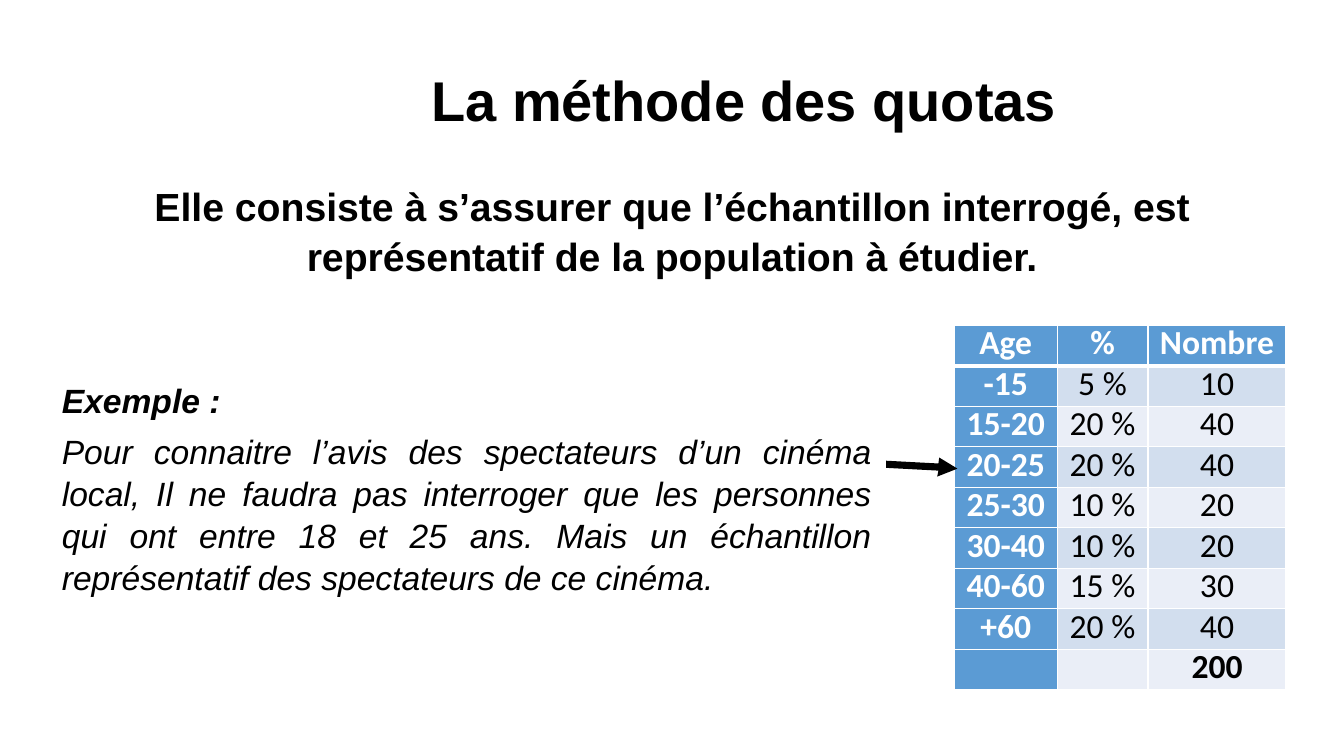
from dataclasses import dataclass

from lxml.etree import SubElement
from pptx import Presentation
from pptx.dml.color import RGBColor
from pptx.enum.text import MSO_ANCHOR, PP_ALIGN
from pptx.oxml.ns import qn
from pptx.util import Cm, Pt


@dataclass(frozen=True)
class Theme:
    text_font: str = "Arial"
    table_font: str = "Calibri"
    black: str = "000000"
    white: str = "FFFFFF"
    header: str = "5B9BD4"
    odd_band: str = "D2DEEE"
    even_band: str = "EAEEF7"
    title_size: int = 40
    definition_size: int = 28
    body_size: int = 24
    thin_border: int = 1
    thick_border: int = 3


class SlideBuilder:
    def __init__(self, slide, theme):
        self.slide = slide
        self.theme = theme

    def add_run(self, paragraph, text, font, size, color, bold=False, italic=False):
        run = paragraph.add_run()
        run.text = text
        run.font.name = font
        run.font.size = Pt(size)
        run.font.color.rgb = RGBColor.from_string(color)
        run.font.bold = bold
        run.font.italic = italic

    def text(self, box, paragraphs, size, align, line_spacing=1.0, space_before=0, italic=False):
        frame = self.slide.shapes.add_textbox(*map(Cm, box)).text_frame
        frame.word_wrap = True
        frame.margin_left = frame.margin_right = frame.margin_top = frame.margin_bottom = 0
        for index, (content, bold) in enumerate(paragraphs):
            paragraph = frame.add_paragraph() if index else frame.paragraphs[0]
            paragraph.alignment = align
            paragraph.line_spacing = line_spacing
            if index:
                paragraph.space_before = Pt(space_before)
            self.add_run(paragraph, content, self.theme.text_font, size,
                         self.theme.black, bold, italic)

    def add_borders(self, cell, row):
        properties = cell._tc.get_or_add_tcPr()
        thick_side = {0: "lnB", 1: "lnT"}.get(row)
        for side in ("lnL", "lnR", "lnT", "lnB"):
            width = self.theme.thick_border if side == thick_side else self.theme.thin_border
            line = SubElement(properties, qn(f"a:{side}"), w=str(Pt(width)))
            fill = SubElement(line, qn("a:solidFill"))
            SubElement(fill, qn("a:srgbClr"), val=self.theme.white)

    def table(self, left, top, column_widths, row_height, rows):
        theme = self.theme
        table = self.slide.shapes.add_table(
            len(rows), len(column_widths), Cm(left), Cm(top),
            Cm(sum(column_widths)), Cm(row_height * len(rows))).table
        table.first_row = table.horz_banding = False
        for column, width in zip(table.columns, column_widths):
            column.width = Cm(width)
        for row, values in enumerate(rows):
            table.rows[row].height = Cm(row_height)
            for column, value in enumerate(values):
                cell = table.cell(row, column)
                heading = row == 0 or column == 0
                total = row == len(rows) - 1
                band = theme.odd_band if row % 2 else theme.even_band
                self.add_borders(cell, row)
                cell.fill.solid()
                cell.fill.fore_color.rgb = RGBColor.from_string(theme.header if heading else band)
                cell.margin_left = cell.margin_right = cell.margin_top = cell.margin_bottom = 0
                cell.vertical_anchor = MSO_ANCHOR.TOP
                paragraph = cell.text_frame.paragraphs[0]
                paragraph.alignment = PP_ALIGN.CENTER
                paragraph.line_spacing = Pt(27.6)
                if value:
                    self.add_run(paragraph, value, theme.table_font, theme.body_size,
                                 theme.white if heading else theme.black, heading or total)

    def outline(self, points, color):
        start, *others = [(Cm(x), Cm(y)) for x, y in points]
        builder = self.slide.shapes.build_freeform(*start)
        builder.add_line_segments(others, close=True)
        shape = builder.convert_to_shape()
        shape.shadow.inherit = False
        shape.fill.solid()
        shape.fill.fore_color.rgb = RGBColor.from_string(color)
        shape.line.fill.background()


QUOTAS = [
    ("Age", "%", "Nombre"),
    ("-15", "5 %", "10"),
    ("15-20", "20 %", "40"),
    ("20-25", "20 %", "40"),
    ("25-30", "10 %", "20"),
    ("30-40", "10 %", "20"),
    ("40-60", "15 %", "30"),
    ("+60", "20 %", "40"),
    ("", "", "200"),
]
ARROW = [(22.33, 11.61), (23.65, 11.68), (23.67, 11.53), (24.13, 11.81),
         (23.62, 12.01), (23.65, 11.86), (22.33, 11.79)]


def main():
    presentation = Presentation()
    presentation.slide_width = Cm(33.87)
    presentation.slide_height = Cm(19.05)
    slide = presentation.slides.add_slide(presentation.slide_layouts[6])
    theme = Theme()
    builder = SlideBuilder(slide, theme)

    builder.text((10.87, 1.66, 20.24, 1.7), [("La méthode des quotas", True)],
                 theme.title_size, PP_ALIGN.LEFT)
    builder.text((3.48, 4.5, 26.92, 2.5),
                 [("Elle consiste à s’assurer que l’échantillon interrogé, est "
                   "représentatif de la population à étudier.", True)],
                 theme.definition_size, PP_ALIGN.CENTER, line_spacing=1.07)
    builder.text((1.56, 9.52, 20.4, 5.3),
                 [("Exemple :", True),
                  ("Pour connaitre l’avis des spectateurs d’un cinéma local, Il ne faudra pas "
                   "interroger que les personnes qui ont entre 18 et 25 ans. Mais un échantillon "
                   "représentatif des spectateurs de ce cinéma.", False)],
                 theme.body_size, PP_ALIGN.JUSTIFY, line_spacing=1.05, space_before=6, italic=True)
    builder.table(24.05, 8.2, (2.59, 2.29, 3.48), 1.02, QUOTAS)
    builder.outline(ARROW, theme.black)

    presentation.save("out.pptx")


if __name__ == "__main__":
    main()
